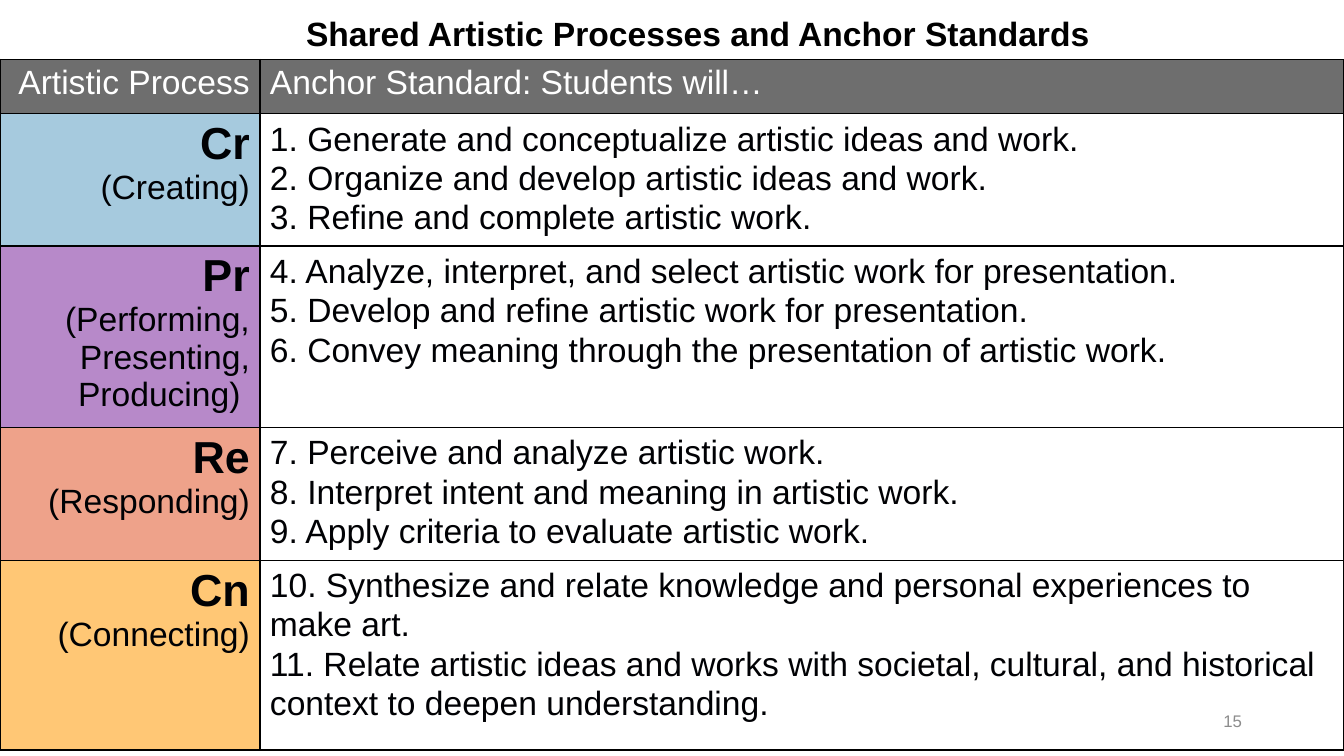
from lxml import etree
from pptx import Presentation
from pptx import util as u
from pptx.dml.color import RGBColor
from pptx.enum import text
from pptx.oxml import ns

FONT = "Arial"
BLACK = RGBColor(0x00, 0x00, 0x00)
INK = RGBColor(0x00, 0x01, 0x04)
WHITE = RGBColor(0xFF, 0xFF, 0xFF)
HEADER_GRAY = RGBColor(0x6E, 0x6E, 0x6E)
NUMBER_GRAY = RGBColor(0x8C, 0x8C, 0x8C)
BLUE = RGBColor(0xA6, 0xCA, 0xDE)
PURPLE = RGBColor(0xB7, 0x89, 0xC9)
SALMON = RGBColor(0xEE, 0xA2, 0x8A)
AMBER = RGBColor(0xFF, 0xC7, 0x75)
LEFT, CENTER, RIGHT = text.PP_ALIGN.LEFT, text.PP_ALIGN.CENTER, text.PP_ALIGN.RIGHT

PROCESSES = [
    ("Cr", "(Creating)", BLUE, 3.33, [
        "1. Generate and conceptualize artistic ideas and work.",
        "2. Organize and develop artistic ideas and work.",
        "3. Refine and complete artistic work."]),
    ("Pr", "(Performing,\vPresenting, Producing) ", PURPLE, 4.57, [
        "4. Analyze, interpret, and select artistic work for presentation.",
        "5. Develop and refine artistic work for presentation.",
        "6. Convey meaning through the presentation of artistic work."]),
    ("Re", "(Responding)", SALMON, 3.35, [
        "7. Perceive and analyze artistic work.",
        "8. Interpret intent and meaning in artistic work.",
        "9. Apply criteria to evaluate artistic work."]),
    ("Cn", "(Connecting)", AMBER, 4.78, [
        "10. Synthesize and relate knowledge and personal experiences to make art.",
        "11. Relate artistic ideas and works with societal, cultural, and historical "
        "context to deepen understanding."]),
]


def write(frame, lines, color, align, sizes=(24,), bold_first=False, spacing=1.0):
    for index, line in enumerate(lines):
        para = frame.paragraphs[0] if index == 0 else frame.add_paragraph()
        para.text = line
        para.alignment = align
        para.line_spacing = spacing
        para.font.name = FONT
        para.font.size = u.Pt(sizes[min(index, len(sizes) - 1)])
        para.font.bold = bold_first and index == 0
        para.font.color.rgb = color


def style_cell(cell, fill):
    properties = cell._tc.get_or_add_tcPr()
    for side in ("lnL", "lnR", "lnT", "lnB"):
        border = etree.SubElement(properties, ns.qn(f"a:{side}"), w=str(u.Pt(1)))
        solid = etree.SubElement(border, ns.qn("a:solidFill"))
        etree.SubElement(solid, ns.qn("a:srgbClr"), val=str(BLACK))
    cell.fill.solid()
    cell.fill.fore_color.rgb = fill


deck = Presentation()
deck.slide_width, deck.slide_height = u.Cm(33.87), u.Cm(19.05)
page = deck.slides.add_slide(deck.slide_layouts[5])

title = page.shapes.title
title.left, title.top, title.width, title.height = u.Cm(1.8), u.Cm(-0.69), u.Cm(31.57), u.Cm(3.18)
title.text_frame.vertical_anchor = text.MSO_ANCHOR.MIDDLE
write(title.text_frame, ["Shared Artistic Processes and Anchor Standards"], BLACK, CENTER,
      bold_first=True, spacing=0.9)

table = page.shapes.add_table(len(PROCESSES) + 1, 2, u.Cm(0), u.Cm(1.5), u.Cm(33.87), u.Cm(17.4)).table
table.first_row = False
table.horz_banding = False
table.columns[0].width = u.Cm(6.55)
table.columns[1].width = u.Cm(27.32)

table.rows[0].height = u.Cm(1.37)
headings = [("Artistic Process", RIGHT), ("Anchor Standard: Students will…", LEFT)]
for column, (heading, align) in enumerate(headings):
    cell = table.cell(0, column)
    style_cell(cell, HEADER_GRAY)
    write(cell.text_frame, [heading], WHITE, align)

for row, (code, process, color, height, standards) in enumerate(PROCESSES, start=1):
    table.rows[row].height = u.Cm(height)
    process_cell, standard_cell = table.cell(row, 0), table.cell(row, 1)
    style_cell(process_cell, color)
    write(process_cell.text_frame, [code, process], INK, RIGHT, sizes=(32, 24), bold_first=True)
    style_cell(standard_cell, WHITE)
    write(standard_cell.text_frame, standards, INK, LEFT, spacing=1.05)

box = page.shapes.add_textbox(u.Cm(23.93), u.Cm(17.65), u.Cm(7.62), u.Cm(1.02))
box.text_frame.word_wrap = True
box.text_frame.vertical_anchor = text.MSO_ANCHOR.MIDDLE
write(box.text_frame, ["15"], NUMBER_GRAY, RIGHT, sizes=(12,))

deck.save("out.pptx")
